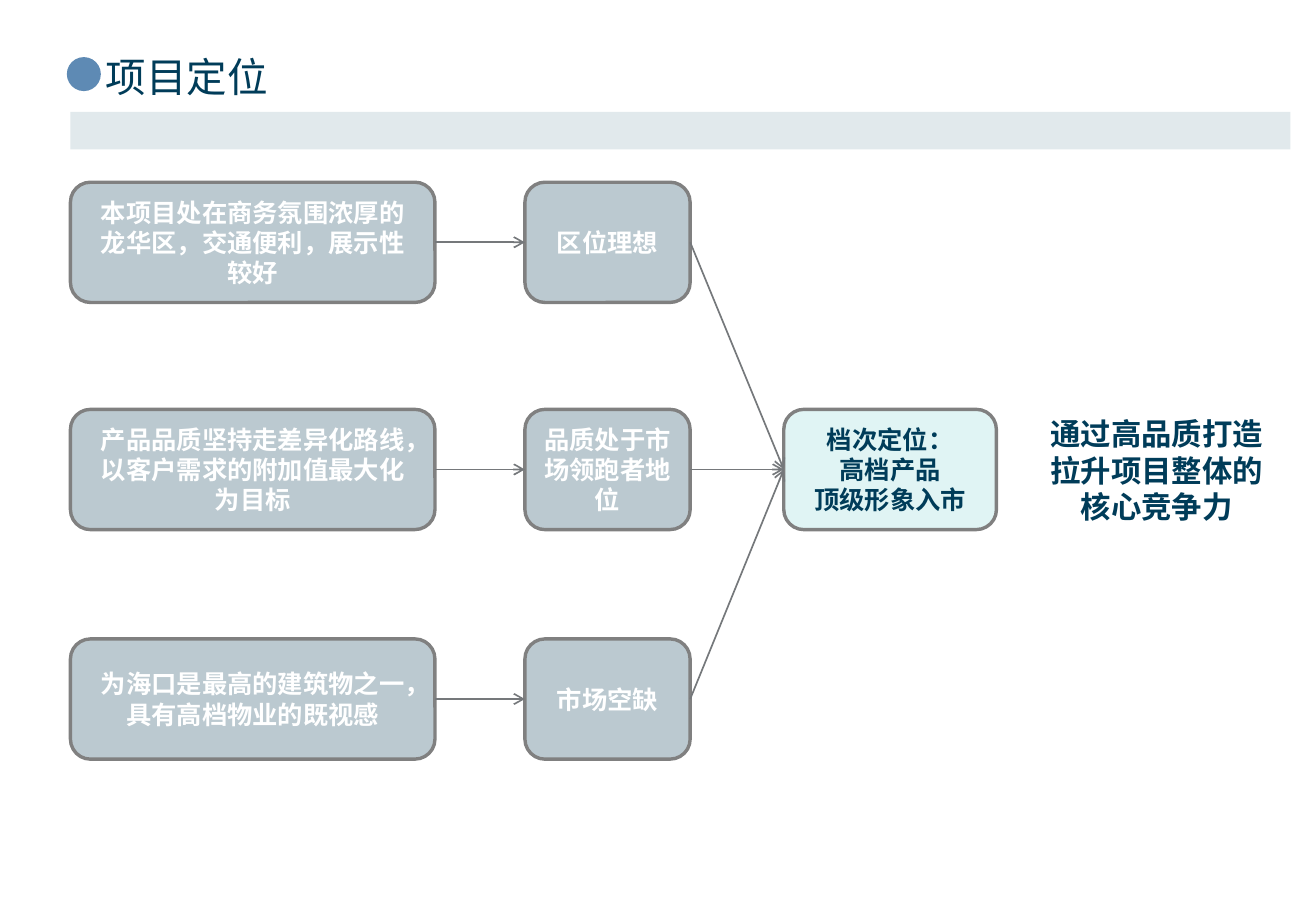
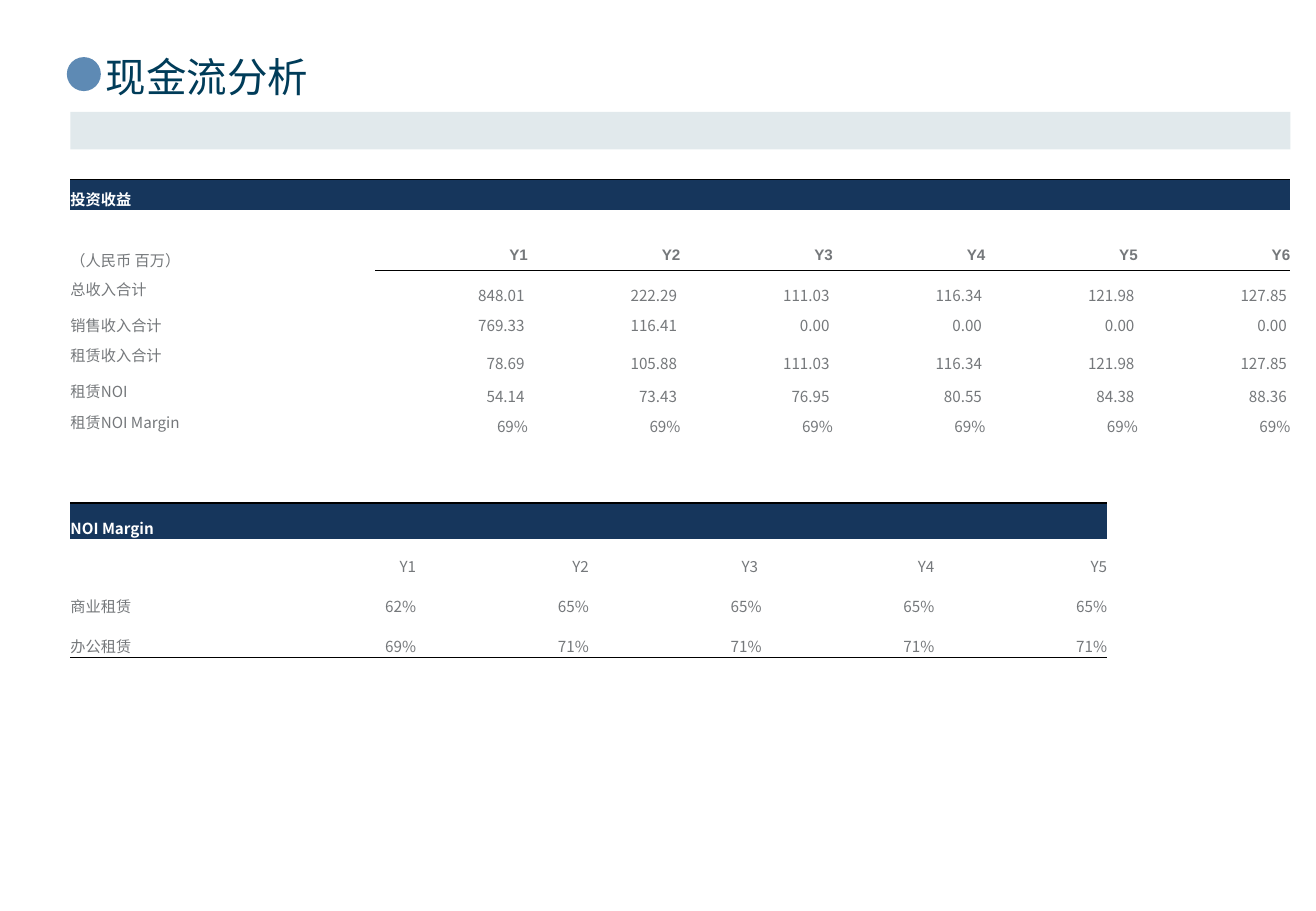
"""Build the project positioning and cash flow slides."""
from lxml import etree
from pptx import Presentation
from pptx.dml.color import RGBColor
from pptx.enum.shapes import MSO_CONNECTOR, MSO_SHAPE
from pptx.enum.text import MSO_ANCHOR, PP_ALIGN
from pptx.oxml.ns import qn
from pptx.util import Inches, Pt

STRAIGHT = MSO_CONNECTOR.STRAIGHT
OVAL, RECTANGLE, ROUNDED = MSO_SHAPE.OVAL, MSO_SHAPE.RECTANGLE, MSO_SHAPE.ROUNDED_RECTANGLE
TOP, MIDDLE, BOTTOM = MSO_ANCHOR.TOP, MSO_ANCHOR.MIDDLE, MSO_ANCHOR.BOTTOM
LEFT, CENTER, RIGHT = PP_ALIGN.LEFT, PP_ALIGN.CENTER, PP_ALIGN.RIGHT
LEFT_SIDE, RIGHT_SIDE = 1, 3

WHITE = RGBColor(0xFF, 0xFF, 0xFF)
BLACK = RGBColor(0x00, 0x00, 0x00)
TITLE_BLUE = RGBColor(0x00, 0x3C, 0x59)
DOT_BLUE = RGBColor(0x5E, 0x8A, 0xB4)
BAND_GREY = RGBColor(0xE1, 0xE9, 0xEC)
BOX_GREY = RGBColor(0xBB, 0xC9, 0xD0)
BOX_EDGE = RGBColor(0x80, 0x80, 0x80)
BOX_MINT = RGBColor(0xE0, 0xF4, 0xF4)
TEXT_GREY = RGBColor(0x75, 0x78, 0x7B)
NAVY = RGBColor(0x16, 0x36, 0x5C)
LATIN, CJK, HEADER_FONT = "Calibri", "Noto Sans CJK SC", "Arial"
PLAIN_TABLE = "{2D5ABB26-0587-4C30-8999-92F81FD0307C}"

MARGIN, BAND_WIDTH = 0.58, 10.04
BOX_HEIGHT = 0.99
REASON_X, REASON_WIDTH = MARGIN, 3
RESULT_X, RESULT_WIDTH = 4.32, 1.36
GOAL_X, GOAL_Y, GOAL_WIDTH = 6.45, 3.37, 1.75

POSITIONING_TITLE = "项目定位"
ARGUMENTS = [
    (1.5, "本项目处在商务氛围浓厚的龙华区，交通便利，展示性较好", "区位理想"),
    (GOAL_Y, "产品品质坚持走差异化路线，以客户需求的附加值最大化为目标", "品质处于市场领跑者地位"),
    (5.26, "为海口是最高的建筑物之一，具有高档物业的既视感", "市场空缺"),
]
GOAL = "档次定位：\n高档产品\n顶级形象入市"
CONCLUSION = "通过高品质打造拉升项目整体的核心竞争力"

CASH_FLOW_TITLE = "现金流分析"
INCOME_ROWS = [
    ["投资收益"],
    [],
    ["（人民币 百万）", "", "Y1", "Y2", "Y3", "Y4", "Y5", "Y6"],
    ["总收入合计", "", "848.01 ", "222.29 ", "111.03 ", "116.34 ", "121.98 ", "127.85 "],
    ["销售收入合计", "", "769.33 ", "116.41 ", "0.00 ", "0.00 ", "0.00 ", "0.00 "],
    ["租赁收入合计", "", "78.69 ", "105.88 ", "111.03 ", "116.34 ", "121.98 ", "127.85 "],
    ["租赁NOI", "", "54.14 ", "73.43 ", "76.95 ", "80.55 ", "84.38 ", "88.36 "],
    ["租赁NOI Margin", ""] + ["69%"] * 6,
]
INCOME_HEIGHTS = [0.25, 0.25, 0.25, 0.29, 0.25, 0.31, 0.27, 0.25]
INCOME_MIDDLE_LABELS = {3, 5, 6, 7}
INCOME_YEAR_ROW = 2
MARGIN_ROWS = [
    ["NOI Margin"],
    ["", "Y1", "Y2", "Y3 ", "Y4", "Y5"],
    ["商业租赁", "62%", "65%", "65%", "65%", "65%"],
    ["办公租赁", "69%", "71%", "71%", "71%", "71%"],
]
MARGIN_HEIGHTS = [0.3, 0.31, 0.33, 0.33]


def write(frame, text, size, color, bold=False, font=LATIN, align=LEFT, anchor=TOP):
    frame.word_wrap = True
    frame.vertical_anchor = anchor
    for index, line in enumerate(text.split("\n")):
        paragraph = frame.paragraphs[0] if index == 0 else frame.add_paragraph()
        paragraph.alignment = align
        run = paragraph.add_run()
        run.text = line
        run.font.size, run.font.bold, run.font.name = Pt(size), bold, font
        run.font.color.rgb = color
        etree.SubElement(run.font._element, qn("a:ea"), typeface=CJK)


def add_box(slide, kind, x, y, width, height, fill, edge=None):
    box = slide.shapes.add_shape(kind, Inches(x), Inches(y), Inches(width), Inches(height))
    box.shadow.inherit = False
    box.fill.solid()
    box.fill.fore_color.rgb = fill
    if edge is None:
        box.line.fill.background()
    else:
        box.line.color.rgb = edge
        box.line.width = Pt(2)
    return box


def add_card(slide, x, y, width, text, fill=BOX_GREY, color=WHITE):
    card = add_box(slide, ROUNDED, x, y, width, BOX_HEIGHT, fill, BOX_EDGE)
    write(card.text_frame, text, 15, color, bold=True, align=CENTER, anchor=MIDDLE)
    return card


def add_textbox(slide, x, y, width, height):
    return slide.shapes.add_textbox(Inches(x), Inches(y), Inches(width), Inches(height)).text_frame


def add_arrow(slide, source, target):
    arrow = slide.shapes.add_connector(STRAIGHT, 0, 0, 0, 0)
    arrow.begin_connect(source, RIGHT_SIDE)
    arrow.end_connect(target, LEFT_SIDE)
    arrow.line.color.rgb = TEXT_GREY
    arrow.line.width = Pt(1)
    etree.SubElement(arrow.line._get_or_add_ln(), qn("a:tailEnd"), type="arrow")
    etree.SubElement(arrow._element.spPr, qn("a:effectLst"))


def add_titled_slide(deck, title):
    slide = deck.slides.add_slide(deck.slide_layouts[6])
    add_box(slide, OVAL, 0.55, 0.47, 0.28, 0.28, DOT_BLUE)
    frame = add_textbox(slide, 0.87, 0.38, 9.39, 0.53)
    frame.margin_left = frame.margin_right = 0
    write(frame, title, 24, TITLE_BLUE)
    add_box(slide, RECTANGLE, MARGIN, 0.92, BAND_WIDTH, 0.31, BAND_GREY)
    return slide


def set_border(cell, side, width):
    properties = cell._tc.get_or_add_tcPr()
    border = etree.Element(qn(f"a:{side}"), w=str(Pt(width)))
    fill = etree.SubElement(border, qn("a:solidFill"))
    etree.SubElement(fill, qn("a:srgbClr"), val=str(BLACK))
    properties.insert(0, border)


def add_figures(slide, y, width, rows, heights, ruled_row, ruled_from=0,
                year_row=None, middle_labels=()):
    columns = len(rows[-1])
    table = slide.shapes.add_table(len(rows), columns, Inches(MARGIN), Inches(y),
                                   Inches(width), Inches(sum(heights))).table
    table.first_row = table.horz_banding = False
    table._tbl.tblPr.find(qn("a:tableStyleId")).text = PLAIN_TABLE
    for r, (values, height) in enumerate(zip(rows, heights)):
        table.rows[r].height = Inches(height)
        for c in range(columns):
            cell = table.cell(r, c)
            cell.margin_left = cell.margin_right = cell.margin_top = cell.margin_bottom = 0
            is_year = r == year_row and c > 0
            text = values[c] if c < len(values) else ""
            if text:
                write(cell.text_frame, text, 9, WHITE if r == 0 else TEXT_GREY,
                      bold=r == 0 or is_year, font=HEADER_FONT if is_year else CJK,
                      align=RIGHT if c else LEFT)
            else:
                etree.SubElement(cell.text_frame.paragraphs[0]._p, qn("a:endParaRPr"), sz="900")
            centred = is_year or (c == 0 and r in middle_labels)
            cell.vertical_anchor = MIDDLE if centred else BOTTOM
            if r == 0:
                cell.fill.solid()
                cell.fill.fore_color.rgb = NAVY
                set_border(cell, "lnT", 1)
            else:
                cell.fill.background()
            if r == ruled_row and c >= ruled_from:
                set_border(cell, "lnB", 0.5)


def build_positioning(deck):
    slide = add_titled_slide(deck, POSITIONING_TITLE)
    goal = add_card(slide, GOAL_X, GOAL_Y, GOAL_WIDTH, GOAL, BOX_MINT, TITLE_BLUE)
    for y, reason_text, result_text in ARGUMENTS:
        reason = add_card(slide, REASON_X, y, REASON_WIDTH, reason_text)
        result = add_card(slide, RESULT_X, y, RESULT_WIDTH, result_text)
        add_arrow(slide, reason, result)
        add_arrow(slide, result, goal)
    write(add_textbox(slide, 8.43, GOAL_Y, 2.18, 1.01), CONCLUSION, 18, TITLE_BLUE,
          bold=True, align=CENTER)


def build_cash_flow(deck):
    slide = add_titled_slide(deck, CASH_FLOW_TITLE)
    add_figures(slide, 1.48, BAND_WIDTH, INCOME_ROWS, INCOME_HEIGHTS, INCOME_YEAR_ROW,
                ruled_from=2, year_row=INCOME_YEAR_ROW, middle_labels=INCOME_MIDDLE_LABELS)
    add_figures(slide, 4.14, 8.53, MARGIN_ROWS, MARGIN_HEIGHTS, len(MARGIN_ROWS) - 1)


def main():
    deck = Presentation()
    deck.slide_width, deck.slide_height = Inches(10.83), Inches(7.5)
    build_positioning(deck)
    build_cash_flow(deck)
    deck.save("out.pptx")


if __name__ == "__main__":
    main()
